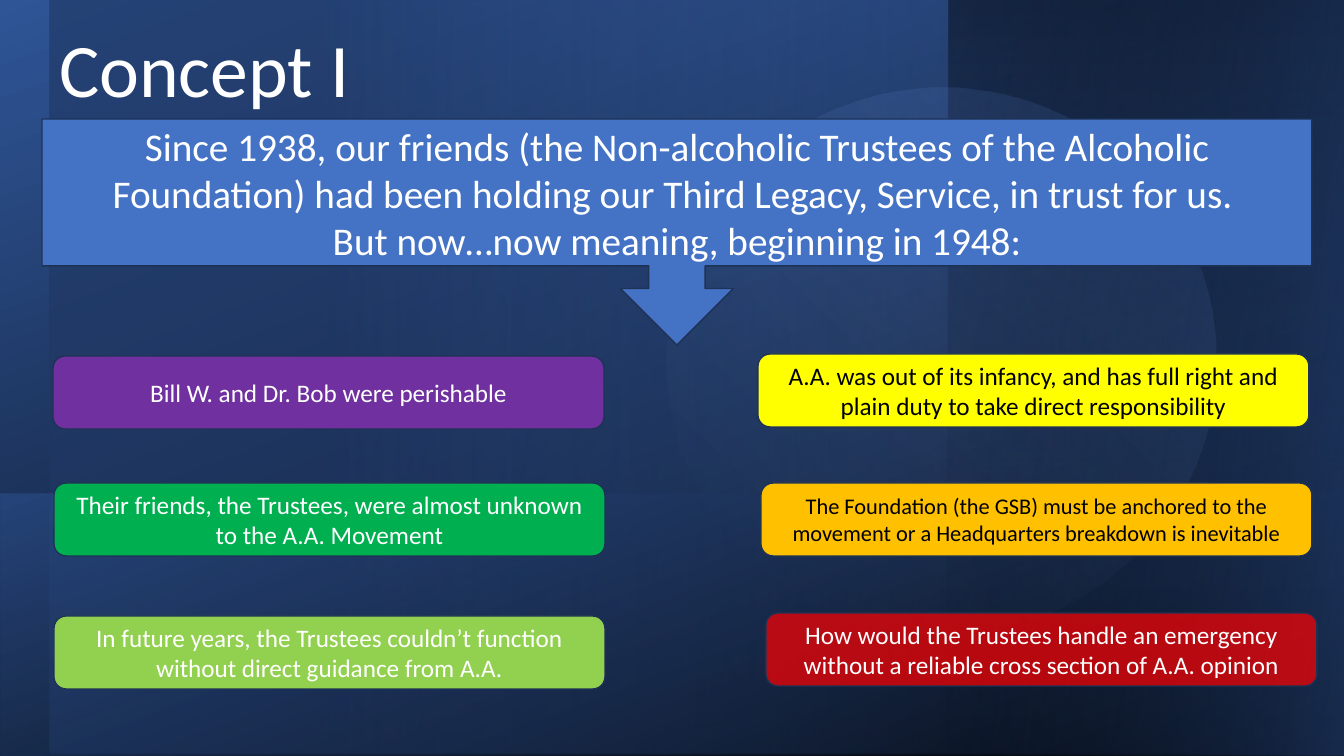
import lxml.etree
import pptx
import pptx.dml.color
import pptx.enum.shapes
import pptx.enum.text
import pptx.oxml.ns
import pptx.util

RGBColor = pptx.dml.color.RGBColor
MSO_SHAPE = pptx.enum.shapes.MSO_SHAPE
PP_ALIGN = pptx.enum.text.PP_ALIGN
MSO_ANCHOR = pptx.enum.text.MSO_ANCHOR

PX = 914400 / 100.8
FONT = "Calibri"

WHITE = RGBColor(0xFF, 0xFF, 0xFF)
BLACK = RGBColor(0x00, 0x00, 0x00)
NAVY = RGBColor(0x20, 0x38, 0x64)
DEEP_BLUE = RGBColor(0x2F, 0x55, 0x97)
BLUE = RGBColor(0x44, 0x72, 0xC4)
PALE_BLUE = RGBColor(0x8F, 0xAA, 0xDC)
OUTLINE = RGBColor(0x1E, 0x32, 0x56)
PURPLE = RGBColor(0x70, 0x30, 0xA0)
GREEN = RGBColor(0x00, 0xB0, 0x50)
LIME = RGBColor(0x92, 0xD0, 0x50)
YELLOW = RGBColor(0xFF, 0xFF, 0x00)
AMBER = RGBColor(0xFF, 0xC0, 0x00)
RED = RGBColor(0xFF, 0x00, 0x00)

REASON_SIZE = (551, 73)
# left, top, fill, opacity, text colour, text size, text
REASONS = [
    (53, 356, PURPLE, 100, WHITE, 18, "Bill W. and Dr. Bob were perishable"),
    (54, 483, GREEN, 100, WHITE, 18,
     "Their friends, the Trustees, were almost unknown to the A.A. Movement"),
    (54, 616, LIME, 100, WHITE, 18,
     "In future years, the Trustees couldn’t function without direct guidance from A.A."),
    (758, 354, YELLOW, 100, BLACK, 18,
     "A.A. was out of its infancy, and has full right and plain duty to take direct responsibility"),
    (761, 483, AMBER, 100, BLACK, 16,
     "The Foundation (the GSB) must be anchored to the movement or a Headquarters breakdown is inevitable"),
    (766, 613, RED, 70, WHITE, 18,
     "How would the Trustees handle an emergency without a reliable cross section of A.A. opinion"),
]


def px(*lengths):
    return [pptx.util.Emu(round(length * PX)) for length in lengths]


def set_opacity(shape, percents):
    """Give each fill colour of the shape its opacity, in order."""
    for color, percent in zip(shape.element.xpath("./p:spPr//a:srgbClr"), percents):
        if percent < 100:
            alpha = lxml.etree.SubElement(color, pptx.oxml.ns.qn("a:alpha"))
            alpha.set("val", str(percent * 1000))


def add_gradient(slide, box, angle, stops, kind=MSO_SHAPE.RECTANGLE, rotation=0, flip=False):
    """Add a borderless gradient shape; stops are (position, colour, opacity), angle is clockwise."""
    shape = slide.shapes.add_shape(kind, *px(*box))
    shape.shadow.inherit = False
    shape.rotation = rotation
    if flip:
        shape.element.spPr.xfrm.set("flipH", "1")
    shape.fill.gradient()
    shape.fill.gradient_angle = (360 - angle) % 360
    for stop, (position, color, opacity) in zip(shape.fill.gradient_stops, stops):
        stop.position = position / 100
        stop.color.rgb = color
    set_opacity(shape, [opacity for position, color, opacity in stops])
    shape.line.fill.background()


def add_backdrop(slide, box):
    left, top, width, height = box
    add_gradient(slide, box, 250, [(0, BLACK, 100), (100, DEEP_BLUE, 100)])
    add_gradient(slide, (left + 50, top, width - 49, height - 2), 0,
                 [(21, NAVY, 61), (100, BLUE, 0)], rotation=180, flip=True)
    add_gradient(slide, (left + 949, top, 398, height), 270,
                 [(0, DEEP_BLUE, 0), (99, BLACK, 41)])
    add_gradient(slide, (left + 668, top + 86, 547, 550), 240,
                 [(0, BLUE, 24), (79, PALE_BLUE, 0)], MSO_SHAPE.OVAL, rotation=254.6)
    add_gradient(slide, (left, top + 494, width, 262), 290,
                 [(0, DEEP_BLUE, 50), (99, BLACK, 34)], rotation=180, flip=True)
    add_gradient(slide, (left + 768, top + 180, height, 396), 260,
                 [(0, DEEP_BLUE, 50), (99, BLACK, 0)], rotation=270, flip=True)


def write(paragraph, text, size, color, alignment):
    paragraph.alignment = alignment
    run = paragraph.add_run()
    run.text = text
    run.font.name = FONT
    run.font.size = pptx.util.Pt(size)
    run.font.color.rgb = color


def place_title(slide, box, text):
    title = slide.shapes.title
    title.element.getparent().append(title.element)  # in front of the backdrop
    title.left, title.top, title.width, title.height = px(*box)
    frame = title.text_frame
    frame.word_wrap = True
    frame.auto_size = pptx.enum.text.MSO_AUTO_SIZE.SHAPE_TO_FIT_TEXT
    frame.vertical_anchor = MSO_ANCHOR.TOP
    write(frame.paragraphs[0], text, 54, WHITE, PP_ALIGN.LEFT)


def add_panel(slide, kind, box, fill, opacity, paragraphs, size, color):
    shape = slide.shapes.add_shape(kind, *px(*box))
    shape.shadow.inherit = False
    shape.fill.solid()
    shape.fill.fore_color.rgb = fill
    set_opacity(shape, [opacity])
    shape.line.color.rgb = OUTLINE
    shape.line.width = pptx.util.Pt(1)
    frame = shape.text_frame
    frame.word_wrap = True
    frame.vertical_anchor = MSO_ANCHOR.MIDDLE
    for index, text in enumerate(paragraphs):
        paragraph = frame.add_paragraph() if index else frame.paragraphs[0]
        write(paragraph, text, size, color, PP_ALIGN.CENTER)


def add_reasons(slide):
    for left, top, fill, opacity, color, size, text in REASONS:
        add_panel(slide, MSO_SHAPE.ROUNDED_RECTANGLE, (left, top, *REASON_SIZE),
                  fill, opacity, [text], size, color)


def main():
    presentation = pptx.Presentation()
    presentation.slide_width, presentation.slide_height = px(1344, 756)
    slide = presentation.slides.add_slide(presentation.slide_layouts.get_by_name("Title Only"))
    add_backdrop(slide, (0, 0, 1344, 756))
    add_panel(slide, MSO_SHAPE.DOWN_ARROW_CALLOUT, (42, 119, 1270, 226), BLUE, 100, [
        "Since 1938, our friends (the Non-alcoholic Trustees of the Alcoholic Foundation) "
        "had been holding our Third Legacy, Service, in trust for us. ",
        "But now…now meaning, beginning in 1948:",
    ], 28, WHITE)
    place_title(slide, (49, 17, 786, 102), "Concept I")
    add_reasons(slide)
    presentation.save("out.pptx")


if __name__ == "__main__":
    main()
